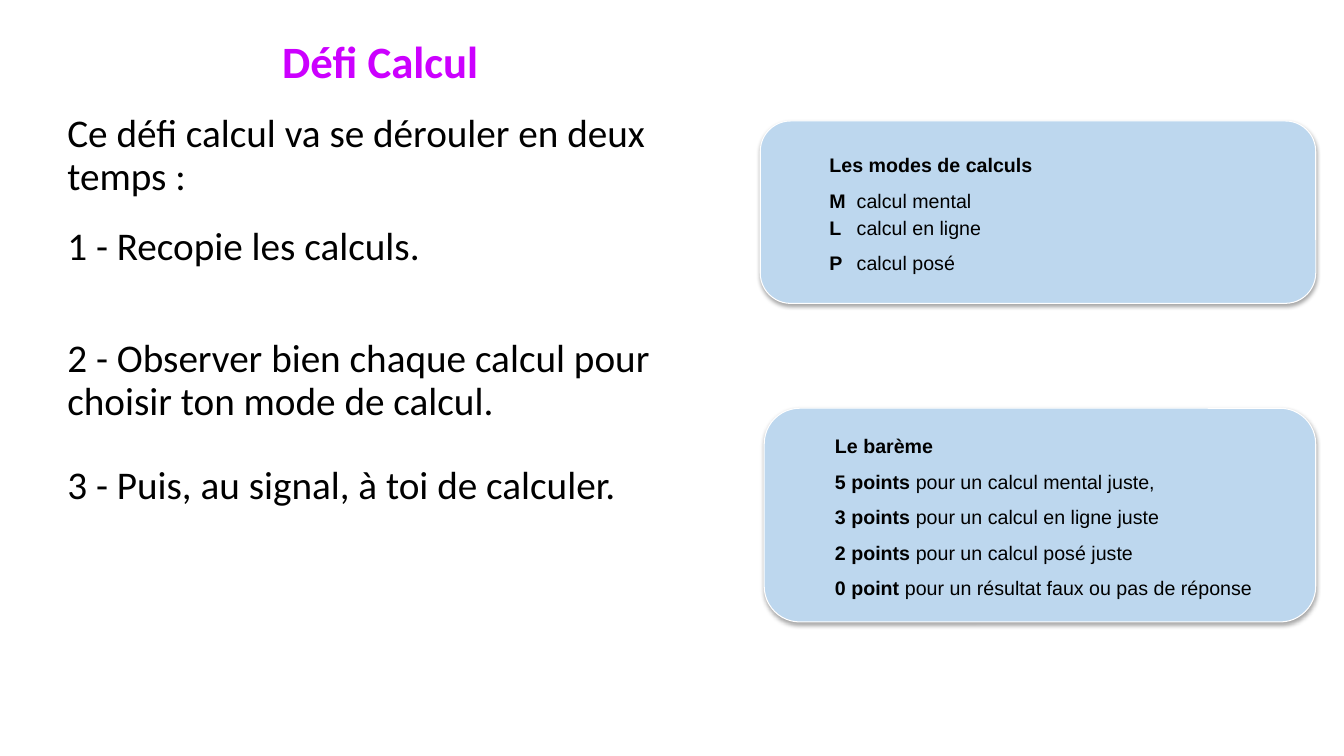
from lxml import etree
from pptx import Presentation
from pptx import util as u
from pptx.dml.color import RGBColor
from pptx.enum import shapes, text
from pptx.oxml import ns


def color(value):
    return RGBColor.from_string(value)


class DefiSlide:
    INK = "000000"
    TITLE = "CC00FF"
    PANEL = "BDD7EE"
    BORDER = "FFFFFF"
    BODY_FONT = "Calibri"
    PANEL_FONT = "Arial"

    def __init__(self, presentation):
        self.slide = presentation.slides.add_slide(presentation.slide_layouts[6])

    def add_run(self, paragraph, words, font, size, ink, bold=False):
        run = paragraph.add_run()
        run.text = words
        run.font.name = font
        run.font.size = u.Pt(size)
        run.font.bold = bold
        run.font.color.rgb = color(ink)

    def add_paragraph(self, frame, index, before=0, spacing=1.0):
        paragraph = frame.paragraphs[0] if index == 0 else frame.add_paragraph()
        paragraph.alignment = text.PP_ALIGN.LEFT
        paragraph.space_before = u.Pt(before)
        paragraph.line_spacing = spacing
        return paragraph

    def add_text(self, box, lines, size, ink, bold=False, spacing=1.0):
        shape = self.slide.shapes.add_textbox(*map(u.Inches, box))
        frame = shape.text_frame
        frame.word_wrap = True
        for index, (words, before) in enumerate(lines):
            paragraph = self.add_paragraph(frame, index, before, spacing)
            self.add_run(paragraph, words, self.BODY_FONT, size, ink, bold)

    def add_shadow(self, shape):
        shape.shadow.inherit = False
        effects = shape._element.spPr.find(ns.qn("a:effectLst"))
        shadow = etree.SubElement(
            effects, ns.qn("a:outerShdw"), blurRad=str(u.Pt(3.1)),
            dist=str(u.Pt(1.8)), dir="5400000", rotWithShape="0")
        tint = etree.SubElement(shadow, ns.qn("a:srgbClr"), val=self.INK)
        etree.SubElement(tint, ns.qn("a:alpha"), val="35000")

    def add_panel(self, box, heading, entries, hanging=0):
        shape = self.slide.shapes.add_shape(
            shapes.MSO_SHAPE.ROUNDED_RECTANGLE, *map(u.Inches, box))
        shape.fill.solid()
        shape.fill.fore_color.rgb = color(self.PANEL)
        shape.line.color.rgb = color(self.BORDER)
        shape.line.width = u.Pt(0.75)
        self.add_shadow(shape)
        frame = shape.text_frame
        frame.word_wrap = True
        frame.vertical_anchor = text.MSO_ANCHOR.MIDDLE
        for index, (label, words, before) in enumerate([(heading, "", 6), *entries]):
            paragraph = self.add_paragraph(frame, index, before, 1.15)
            properties = paragraph._p.get_or_add_pPr()
            properties.set("marL", str(u.Inches(0.5 + hanging)))
            properties.set("indent", str(u.Inches(-hanging)))
            self.add_run(paragraph, label, self.PANEL_FONT, 14, self.INK, True)
            if words:
                self.add_run(paragraph, words, self.PANEL_FONT, 14, self.INK)


def main():
    presentation = Presentation()
    presentation.slide_width = u.Inches(13.33)
    presentation.slide_height = u.Inches(7.5)
    challenge = DefiSlide(presentation)
    challenge.add_text((0.57, 1.08, 6.74, 6.08), [
        ("Ce défi calcul va se dérouler en deux temps :", 0),
        ("1 - Recopie les calculs.", 20),
        ("2 - Observer bien chaque calcul pour choisir ton mode de calcul.", 50),
        ("3 - Puis, au signal, à toi de calculer.", 30),
    ], 28, challenge.INK, spacing=0.9)
    challenge.add_panel((7.58, 4.05, 5.47, 2.12), "Le barème", [
        ("5 points ", "pour un calcul mental juste,", 6),
        ("3 points ", "pour un calcul en ligne juste", 6),
        ("2 points ", "pour un calcul posé juste", 6),
        ("0 point ", "pour un résultat faux ou pas de réponse", 6),
    ])
    challenge.add_panel((7.54, 1.2, 5.51, 1.81), "Les modes de calculs", [
        ("M", "\tcalcul mental", 6),
        ("L", "\tcalcul en ligne", 0),
        ("P", "\tcalcul posé", 6),
    ], hanging=0.27)
    challenge.add_text((2.7, 0.29, 2.53, 0.64), [("Défi Calcul", 0)],
                       32, challenge.TITLE, bold=True)
    presentation.save("out.pptx")


if __name__ == "__main__":
    main()
